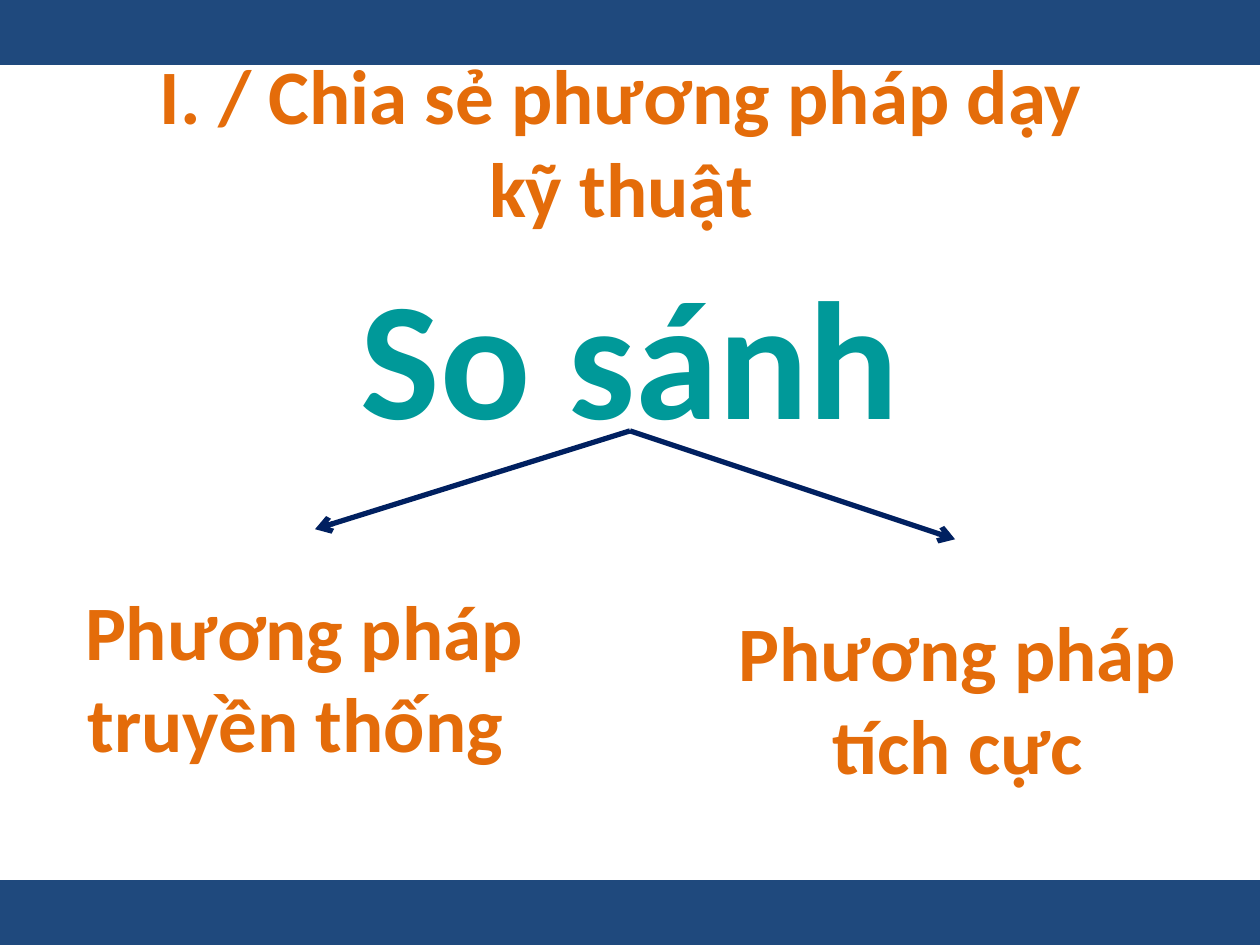
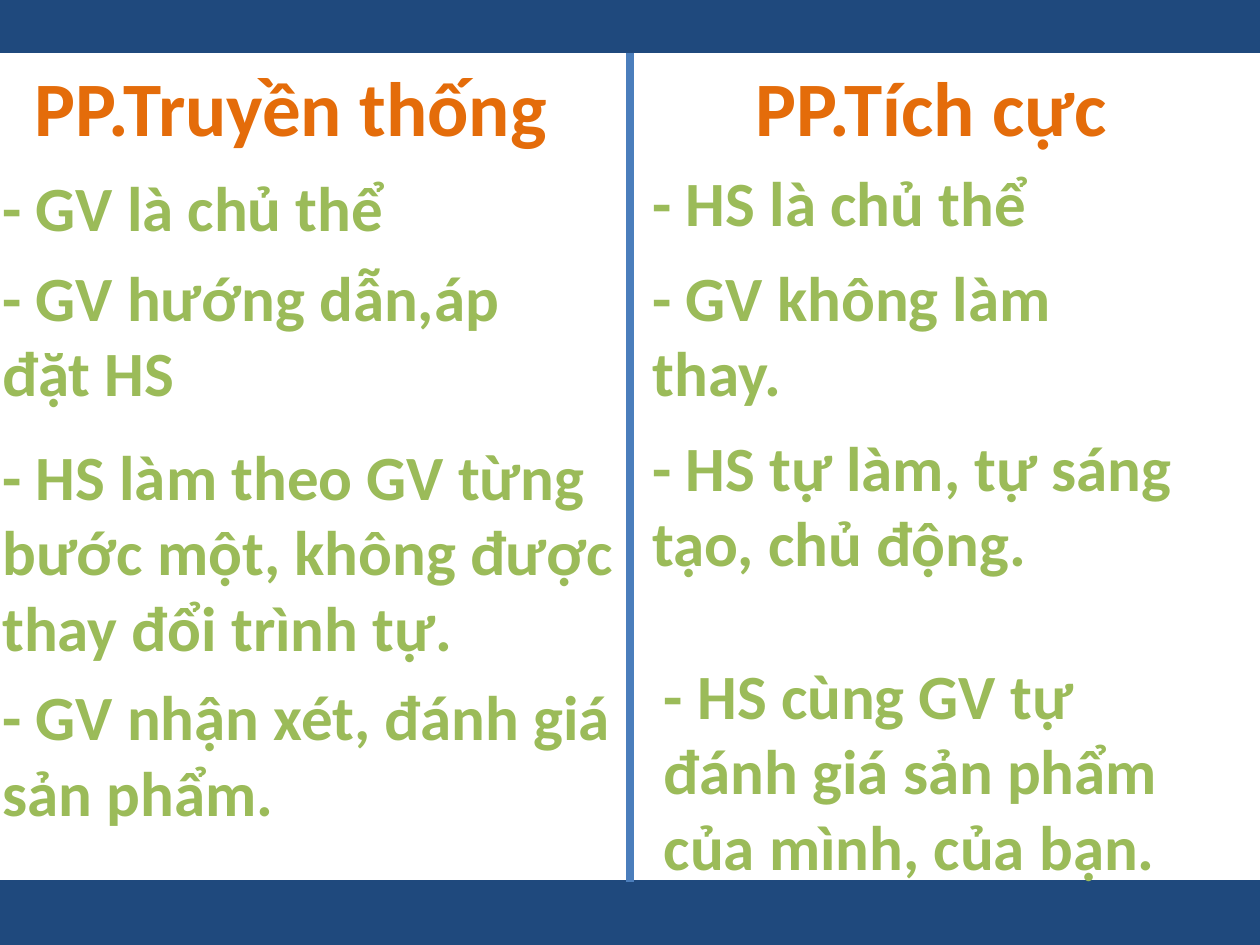
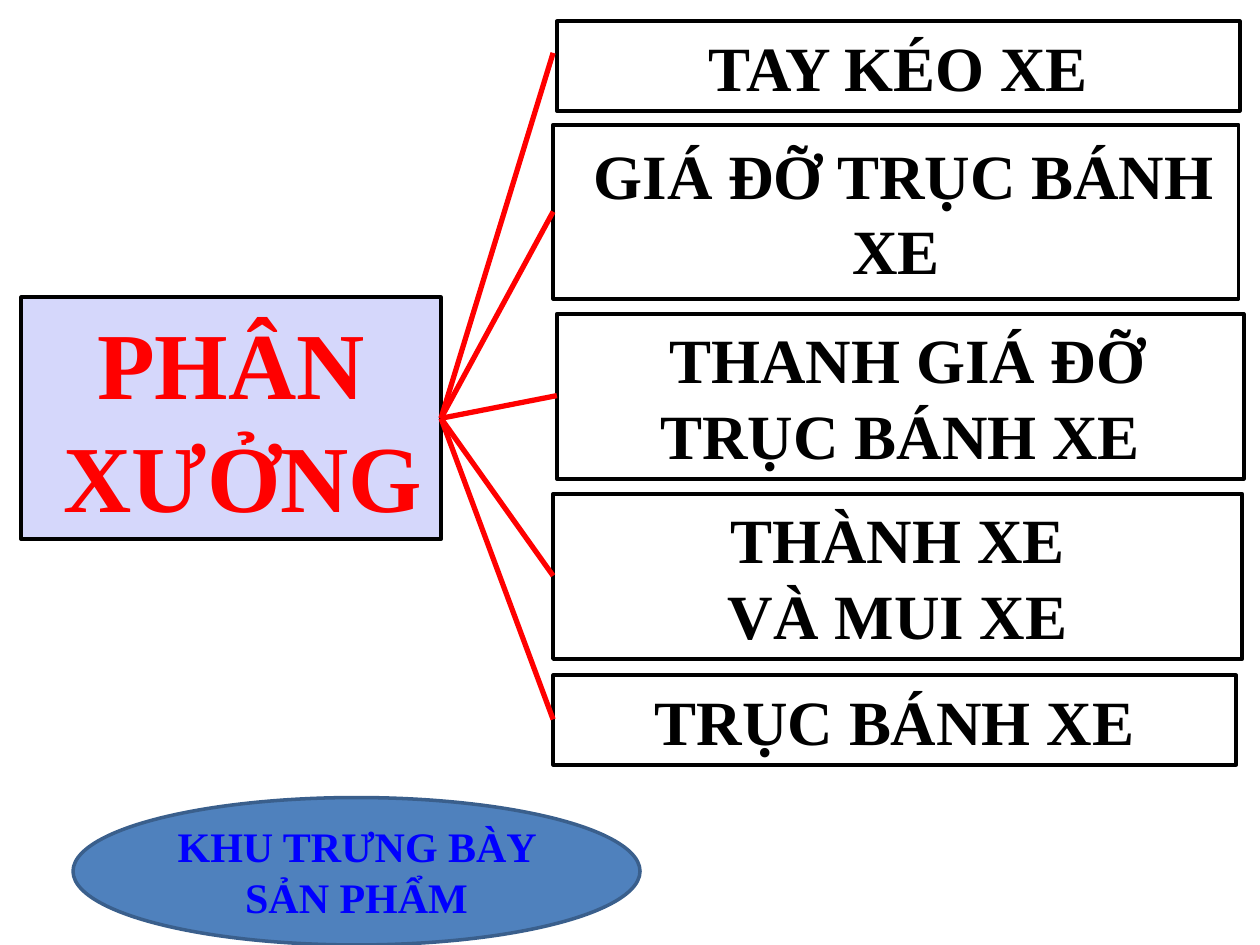
from pptx import Presentation
from pptx.dml.color import RGBColor
from pptx.enum import shapes as kinds, text as txt
from pptx.oxml.ns import qn
from pptx.util import Inches, Pt
from lxml import etree

NAVY = RGBColor(0x1F, 0x49, 0x7D)
DARK = RGBColor(0x00, 0x20, 0x60)
ORANGE = RGBColor(0xE4, 0x6C, 0x0A)
TEAL = RGBColor(0x00, 0x99, 0x99)
GREEN = RGBColor(0x9B, 0xBB, 0x59)
STEEL = RGBColor(0x4B, 0x7E, 0xBC)
SKY = RGBColor(0x4F, 0x81, 0xBD)
RIM = RGBColor(0x3A, 0x5F, 0x8C)
LILAC = RGBColor(0xD5, 0xD7, 0xFB)
RED = RGBColor(0xFF, 0x00, 0x00)
BLUE = RGBColor(0x00, 0x00, 0xFF)
BLACK = RGBColor(0x00, 0x00, 0x00)
WHITE = RGBColor(0xFF, 0xFF, 0xFF)

SANS, SERIF = "Calibri", "Times New Roman"
WIDE, HIGH = 10, 7.5
BAND = 0.58
RECT = kinds.MSO_SHAPE.RECTANGLE
OVAL = kinds.MSO_SHAPE.OVAL
LEFT, MID = txt.PP_ALIGN.LEFT, txt.PP_ALIGN.CENTER


def write(shape, lines, size, color, font, align=MID):
    """Fill a shape with bold paragraphs, one for each line."""
    frame = shape.text_frame
    frame.word_wrap = True
    frame.text = "\n".join(lines)
    for para in frame.paragraphs:
        para.alignment = align
        para.font.size = Pt(size)
        para.font.bold = True
        para.font.name = font
        para.font.color.rgb = color


def label(slide, box, lines, size=44, color=ORANGE, align=MID):
    shape = slide.shapes.add_textbox(*map(Inches, box))
    write(shape, lines, size, color, SANS, align)


def block(slide, kind, box, fill, edge, width):
    shape = slide.shapes.add_shape(kind, *map(Inches, box))
    shape.shadow.inherit = False
    shape.fill.solid()
    shape.fill.fore_color.rgb = fill
    shape.line.color.rgb = edge
    shape.line.width = Pt(width)
    shape.text_frame.vertical_anchor = txt.MSO_ANCHOR.MIDDLE
    return shape


def link(slide, start, end, color, width, arrow=False):
    line = slide.shapes.add_connector(
        kinds.MSO_CONNECTOR.STRAIGHT, *map(Inches, start + end))
    line.line.color.rgb = color
    line.line.width = Pt(width)
    if arrow:
        etree.SubElement(line.line._get_or_add_ln(), qn("a:tailEnd"), type="arrow")
    etree.SubElement(line._element.spPr, qn("a:effectLst"))


def bands(slide, top):
    for y in (top, 7):
        block(slide, RECT, (0, y, WIDE, BAND), NAVY, NAVY, 2)


def compare(slide):
    """Title, then one topic that splits into two methods."""
    bands(slide, -0.08)
    label(slide, (0, 0.33, WIDE, 1.58),
          ["I. / Chia sẻ phương pháp dạy ", "kỹ thuật "])
    label(slide, (0, 1.95, WIDE, 1.72), ["So sánh"], 96, TEAL)
    for end in ((2.5, 4.2), (7.58, 4.28)):
        link(slide, (WIDE / 2, 3.42), end, DARK, 3, arrow=True)
    label(slide, (0.5, 4.58, 3.83, 1.58), ["Phương pháp", "truyền thống "])
    label(slide, (5.67, 4.75, 4, 1.58), ["Phương pháp ", "tích cực "])


def column(slide, head, box, points):
    """Heading over points; each point gives left, top, width, height, text."""
    label(slide, box, [head])
    for *place, point in points:
        label(slide, place, [point], 36, GREEN, LEFT)


def methods(slide):
    bands(slide, -0.17)
    link(slide, (WIDE / 2, 0.42), (WIDE / 2, 7), STEEL, 4.5)
    column(slide, "PP.Truyền thống ", (0.17, 0.42, 4.42, 0.84), [
        (-0.08, 1.29, 4.67, 0.71, "- GV là chủ thể"),
        (-0.08, 2, 4.42, 1.31, "- GV hướng dẫn,áp đặt HS"),
        (-0.08, 3.42, 5.08, 1.92,
         "- HS làm theo GV từng bước một, không được thay đổi trình tự."),
        (-0.08, 5.33, 5.08, 1.31, "- GV nhận xét, đánh giá sản phẩm."),
    ])
    column(slide, "PP.Tích cực ", (5.17, 0.42, 4.58, 0.84), [
        (5.08, 1.25, 4.83, 0.71, "- HS là chủ thể"),
        (5.08, 2, 4.42, 1.31, "- GV không làm thay."),
        (5.08, 3.35, 4.42, 1.31, "- HS tự làm, tự sáng tạo, chủ động."),
        (5.17, 5.16, 4.42, 1.92,
         "- HS cùng GV tự đánh giá sản phẩm của mình, của bạn."),
    ])


def workshop(slide):
    """A root box linked to the parts it makes, with a display area below."""
    root = block(slide, RECT, (0.17, 2.36, 3.33, 1.92), LILAC, BLACK, 2.25)
    write(root, ["PHÂN", " XƯỞNG"], 54, RED, SERIF)
    parts = [
        ((4.42, 0.17, 5.42, 0.71), 0.42, ["TAY KÉO XE"]),
        ((4.39, 0.99, 5.44, 1.38), 1.68, [" GIÁ ĐỠ TRỤC BÁNH XE"]),
        ((4.42, 2.49, 5.45, 1.31), 3.14, [" THANH GIÁ ĐỠ TRỤC BÁNH XE"]),
        ((4.39, 3.92, 5.47, 1.31), 4.57, ["THÀNH XE", "VÀ MUI XE"]),
        ((4.39, 5.36, 5.42, 0.71), 5.71, ["TRỤC BÁNH XE"]),
    ]
    for box, join, lines in parts:
        part = block(slide, RECT, box, WHITE, BLACK, 2.25)
        write(part, lines, 36, BLACK, SERIF)
        link(slide, (3.5, 3.32), (4.42 if join == 3.14 else 4.39, join), RED, 3)
    area = block(slide, OVAL, (0.58, 6.33, 4.5, 1.17), SKY, RIM, 2)
    write(area, ["KHU TRƯNG BÀY SẢN PHẨM"], 24, BLUE, SERIF)


def main():
    deck = Presentation()
    deck.slide_width, deck.slide_height = Inches(WIDE), Inches(HIGH)
    for build in (compare, methods, workshop):
        build(deck.slides.add_slide(deck.slide_layouts[6]))
    deck.save("out.pptx")


if __name__ == "__main__":
    main()
